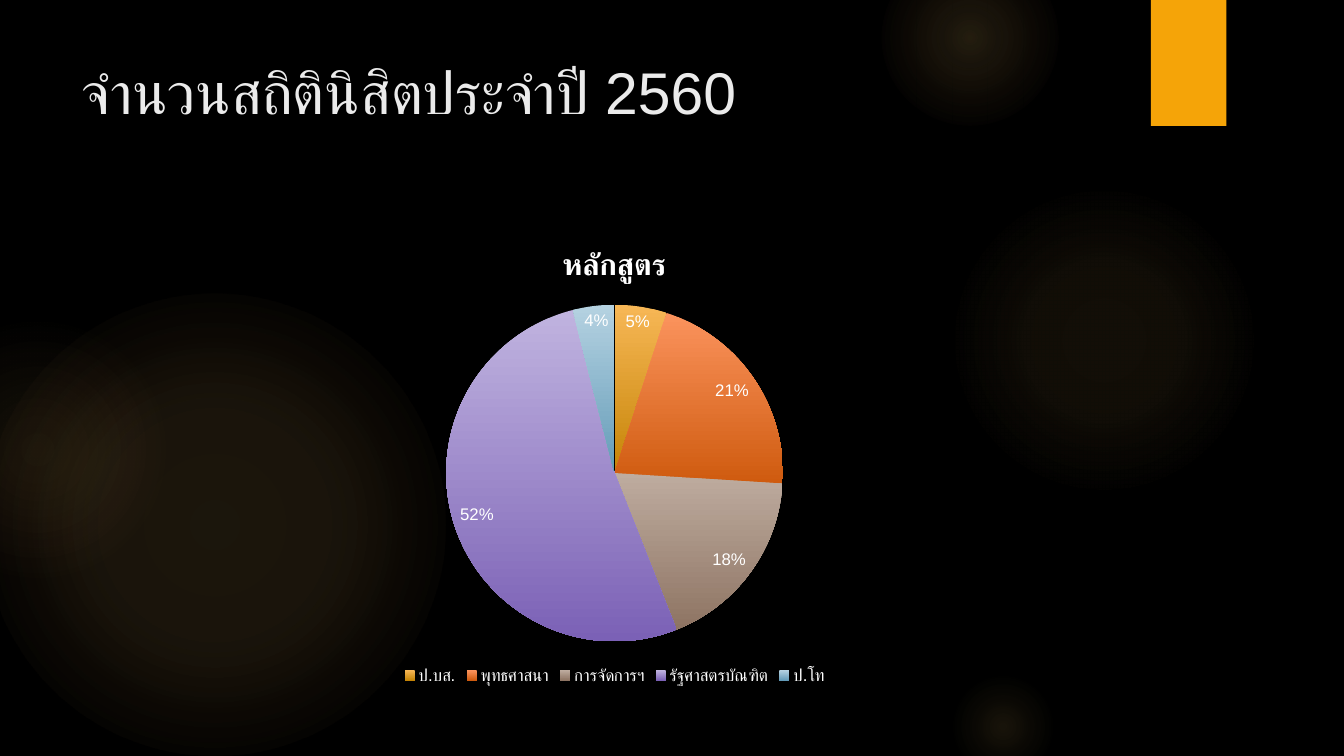
from copy import deepcopy
from dataclasses import dataclass

from lxml import etree
from pptx import Presentation
from pptx import util as u
from pptx.chart.data import CategoryChartData
from pptx.dml.color import RGBColor
from pptx.enum import chart as charts, shapes, text
from pptx.oxml import ns

FONT = "Arial"
WHITE = "FFFFFF"
GOLD = "FAC96A"


@dataclass
class Glow:
    left: float
    top: float
    size: float
    stops: list[tuple[int, int]]  # position %, opacity %
    edge: str = GOLD


@dataclass
class Course:
    name: str
    share: int
    light: str
    dark: str
    label_shift: float = 0  # fraction of the chart width


GLOWS = [
    Glow(-12, 210, 330, [(0, 11), (36, 10), (75, 0)]),
    Glow(-66, 228, 186, [(0, 8), (36, 5), (71, 0)], "F59B74"),
    Glow(677.5, 132, 222, [(0, 7), (36, 6), (69, 0)]),
    Glow(630, -36, 126, [(0, 14), (36, 7), (73, 0)]),
    Glow(677.5, 480, 78, [(0, 10), (31, 5), (66, 0)]),
]

COURSES = [
    Course("ป.บส.", 5, "F7B756", "C58406", 0.01),
    Course("พุทธศาสนา", 21, "FB935D", "CF5B0F"),
    Course("การจัดการฯ", 18, "BEAC9F", "8E7463"),
    Course("รัฐศาสตรบัณฑิต", 52, "C0B3DF", "7B61B6"),
    Course("ป.โท", 4, "B5D2E1", "639BB8", -0.01),
]


def color(code: str) -> RGBColor:
    return RGBColor.from_string(code)


def style(font, size: float, code: str = WHITE, bold: bool = False) -> None:
    font.name = FONT
    font.size = u.Pt(size)
    font.bold = bold
    font.color.rgb = color(code)
    # Thai glyphs take the complex-script typeface
    etree.SubElement(font._rPr, ns.qn("a:cs")).set("typeface", FONT)


def add_plain(slide, kind, left: float, top: float, width: float, height: float):
    shape = slide.shapes.add_shape(
        kind, u.Pt(left), u.Pt(top), u.Pt(width), u.Pt(height))
    shape.shadow.inherit = False
    shape.line.fill.background()
    return shape


def add_glow(slide, glow: Glow) -> None:
    circle = add_plain(slide, shapes.MSO_SHAPE.OVAL,
                       glow.left, glow.top, glow.size, glow.size)
    gradient = etree.Element(ns.qn("a:gradFill"), rotWithShape="1")
    stop_list = etree.SubElement(gradient, ns.qn("a:gsLst"))
    for position, opacity in glow.stops:
        stop = etree.SubElement(stop_list, ns.qn("a:gs"), pos=str(position * 1000))
        tint = etree.SubElement(stop, ns.qn("a:srgbClr"),
                                val=GOLD if opacity else glow.edge)
        etree.SubElement(tint, ns.qn("a:alpha"), val=str(opacity * 1000))
    radial = etree.SubElement(gradient, ns.qn("a:path"), path="circle")
    etree.SubElement(radial, ns.qn("a:fillToRect"),
                     dict.fromkeys("ltrb", "50000"))
    circle._element.spPr.find(ns.qn("a:prstGeom")).addnext(gradient)


def add_heading(slide, words: str) -> None:
    heading = slide.shapes.add_textbox(u.Pt(51), u.Pt(36), u.Pt(741), u.Pt(110))
    frame = heading.text_frame
    frame.word_wrap = True
    frame.vertical_anchor = text.MSO_ANCHOR.TOP
    frame.text = words
    style(frame.paragraphs[0].runs[0].font, 42, "EBEBEB")


def shift_labels(labels, courses: list[Course]) -> None:
    """Move single labels sideways, keeping the settings they share."""
    shared = labels._element
    leader_lines = shared.find(ns.qn("c:showLeaderLines"))
    if leader_lines is not None:
        shared.remove(leader_lines)
    settings = list(shared)
    moved = [item for item in enumerate(courses) if item[1].label_shift]
    for place, (index, course) in enumerate(moved):
        label = etree.Element(ns.qn("c:dLbl"))
        etree.SubElement(label, ns.qn("c:idx"), val=str(index))
        layout = etree.SubElement(label, ns.qn("c:layout"))
        manual = etree.SubElement(layout, ns.qn("c:manualLayout"))
        etree.SubElement(manual, ns.qn("c:x"), val=str(course.label_shift))
        etree.SubElement(manual, ns.qn("c:y"), val="0")
        label.extend([deepcopy(setting) for setting in settings])
        shared.insert(place, label)


def add_course_pie(slide, name: str, courses: list[Course]) -> None:
    data = CategoryChartData()
    data.categories = [course.name for course in courses]
    data.add_series(name, [course.share for course in courses])
    pie = slide.shapes.add_chart(
        charts.XL_CHART_TYPE.PIE, u.Pt(87), u.Pt(161.3), u.Pt(704), u.Pt(330.5),
        data).chart
    style(pie.font, 10)

    # Title and legend
    pie.has_title = True
    pie.chart_title.include_in_layout = False
    caption = pie.chart_title.text_frame
    caption.text = name
    style(caption.paragraphs[0].runs[0].font, 21.3, bold=True)
    pie.has_legend = True
    pie.legend.position = charts.XL_LEGEND_POSITION.BOTTOM
    pie.legend.include_in_layout = False
    style(pie.legend.font, 12)

    # Slices, shaded from light at the top to dark at the bottom
    plot = pie.plots[0]
    plot.vary_by_categories = True
    for index, course in enumerate(courses):
        slice_format = plot.series[0].points[index].format
        slice_format.line.fill.background()
        fill = slice_format.fill
        fill.gradient()
        fill.gradient_angle = 270
        for stop, code in zip(fill.gradient_stops, (course.light, course.dark)):
            stop.color.rgb = color(code)

    # Percentages, with the two narrow slices' labels set apart
    labels = plot.series[0].data_labels
    labels.show_percentage = True
    labels.show_value = False
    labels.number_format = "0%"
    labels.number_format_is_linked = False
    labels.position = charts.XL_LABEL_POSITION.INSIDE_END
    style(labels.font, 12)
    shift_labels(labels, courses)


def main() -> None:
    deck = Presentation()
    deck.slide_width, deck.slide_height = u.Pt(960), u.Pt(540)
    slide = deck.slides.add_slide(deck.slide_layouts[6])

    # Backdrop
    slide.background.fill.solid()
    slide.background.fill.fore_color.rgb = color("000000")
    for glow in GLOWS:
        add_glow(slide, glow)
    ribbon = add_plain(slide, shapes.MSO_SHAPE.RECTANGLE, 822, 0, 54, 90)
    ribbon.fill.solid()
    ribbon.fill.fore_color.rgb = color("F5A408")

    # Content
    add_heading(slide, "จำนวนสถิตินิสิตประจำปี 2560")
    add_course_pie(slide, "หลักสูตร", COURSES)
    deck.save("out.pptx")


if __name__ == "__main__":
    main()
